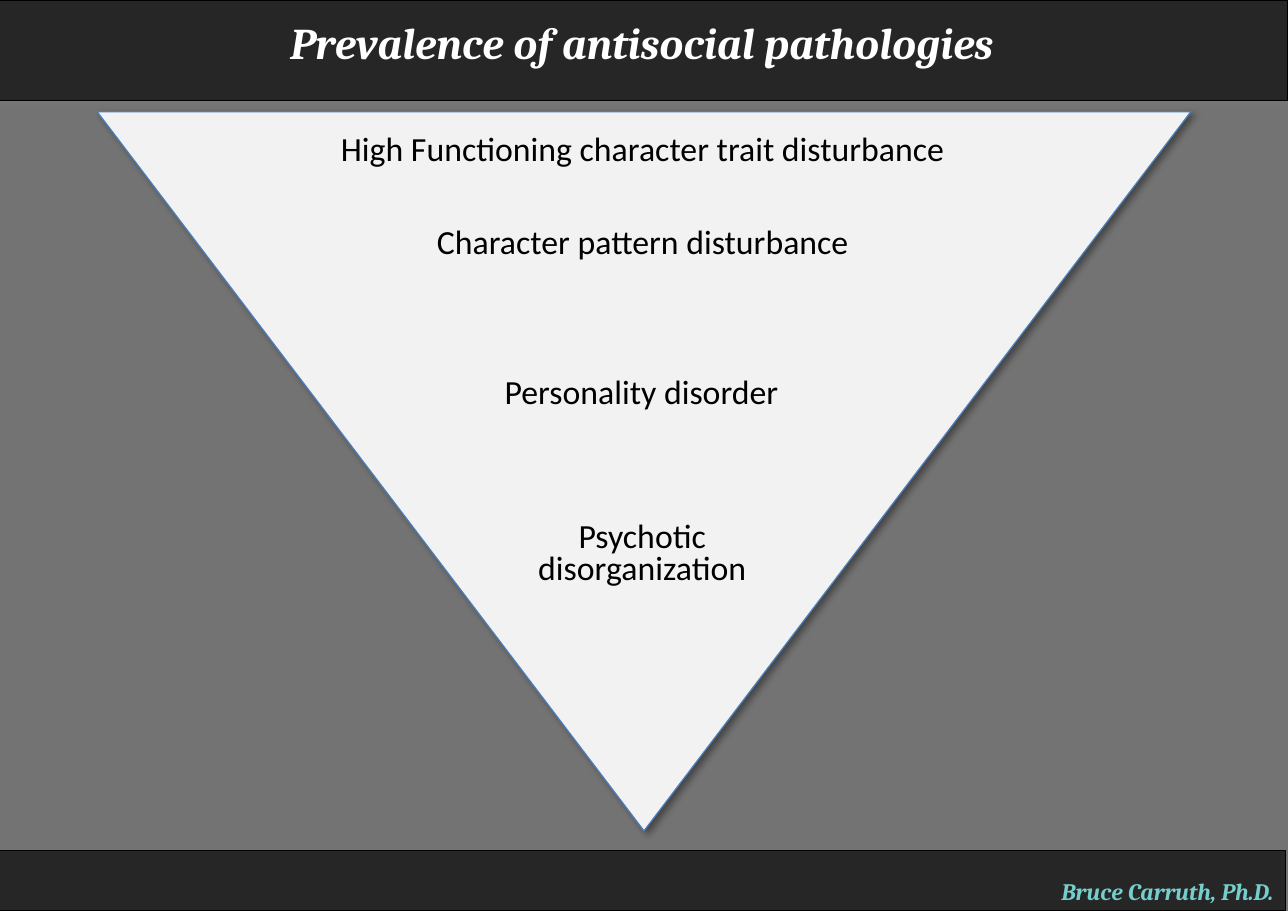
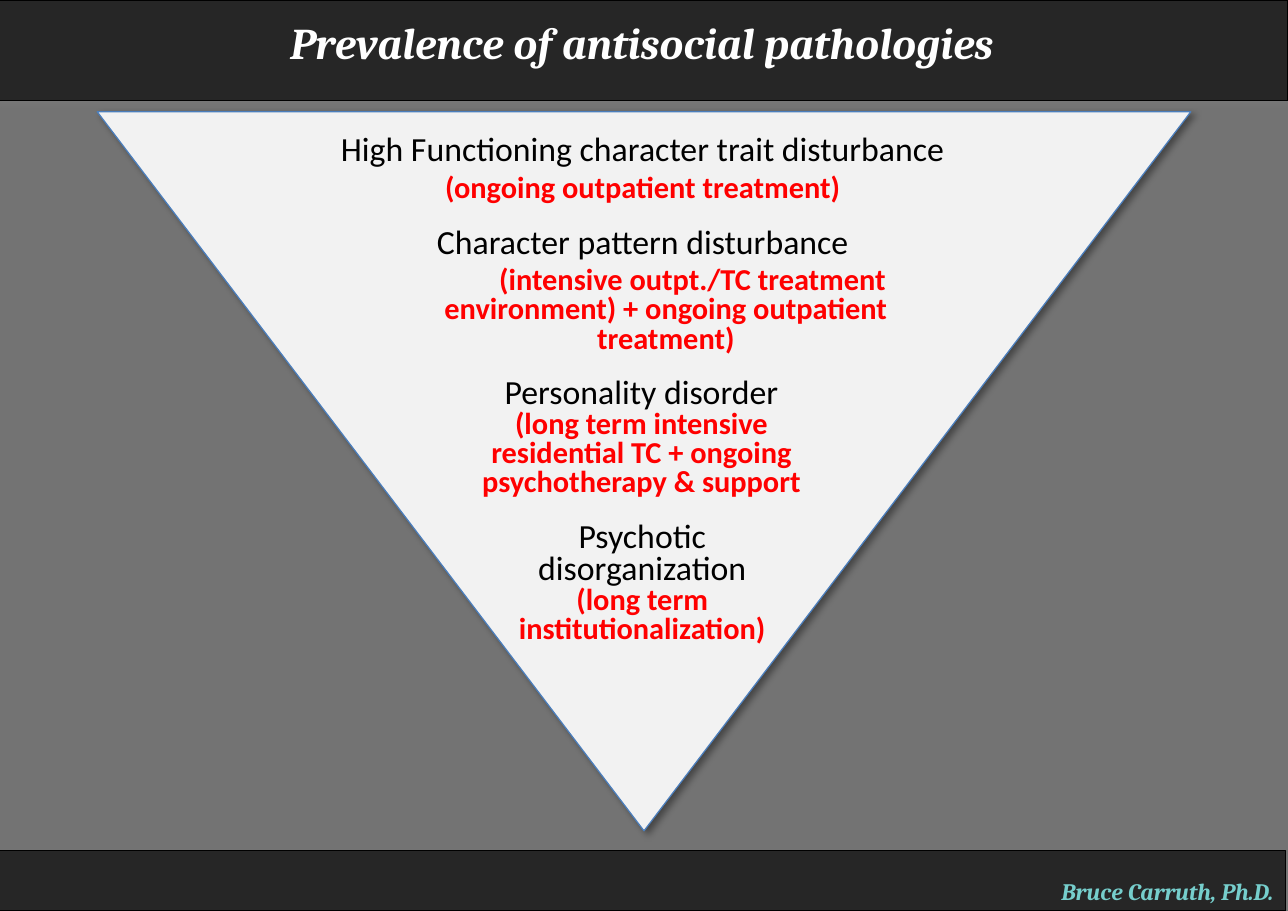
from lxml import etree
from pptx import Presentation
from pptx.dml.color import RGBColor
from pptx.enum.shapes import MSO_SHAPE
from pptx.enum.text import MSO_ANCHOR, MSO_AUTO_SIZE, PP_ALIGN
from pptx.oxml.ns import qn
from pptx.util import Inches, Pt

RECTANGLE, TRIANGLE = MSO_SHAPE.RECTANGLE, MSO_SHAPE.ISOSCELES_TRIANGLE
TOP, BOTTOM = MSO_ANCHOR.TOP, MSO_ANCHOR.BOTTOM
NO_FIT, GROW = MSO_AUTO_SIZE.NONE, MSO_AUTO_SIZE.SHAPE_TO_FIT_TEXT
CENTER, RIGHT = PP_ALIGN.CENTER, PP_ALIGN.RIGHT

COLORS = {
    "background": "737373", "band": "262626", "band_line": "000000",
    "band_shadow": "808080", "triangle": "F2F2F2", "triangle_line": "4B7EBC",
    "triangle_shadow": "000000", "title": "FFFFFF", "author": "76CECC",
    "level": "000000", "treatment": "FF0000",
}
HEADING_FONT, BODY_FONT = "Cambria", "Calibri"
TITLE = "Prevalence of antisocial pathologies"
AUTHOR = "Bruce Carruth, Ph.D."

# Shadow: colour, opacity %, blur pt, distance pt, direction in degrees
BAND_SHADOW = ("band_shadow", 35, 3.1, 1.8, 90)
TRIANGLE_SHADOW = ("triangle_shadow", 40, 4, 3, 45)

# Each level: box, height with treatments, line spacing, space before treatment,
# treatment margin and first-line indent, name, treatments
LEVELS = [
    ((2.58, 1, 5.42, 0.44), 0.74, 1.0, 0, (0, 0),
     "High Functioning character trait disturbance",
     ["(ongoing outpatient treatment)"]),
    ((3.08, 1.83, 4.42, 0.38), 1.16, 0.8, 4, (0.38, 0.44),
     "Character pattern disturbance",
     ["(intensive outpt./TC treatment environment) + ongoing outpatient treatment)"]),
    ((3.78, 3.07, 3, 0.38), 1.1, 0.8, 0, (0, 0),
     "Personality disorder",
     ["(long term intensive", "residential TC + ongoing psychotherapy & support"]),
    ((4.14, 4.25, 2.29, 0.65), 1.43, 0.8, 0, (0, 0),
     "Psychotic disorganization",
     ["(long term institutionalization)"]),
]


def rgb(name):
    return RGBColor.from_string(COLORS[name])


def add_run(paragraph, text, size, font, color, bold=False, italic=False):
    run = paragraph.add_run()
    run.text = text
    run.font.size, run.font.name = Pt(size), font
    run.font.bold, run.font.italic = bold, italic
    run.font.color.rgb = rgb(color)


def set_shadow(shape, color, opacity, blur, distance, direction):
    shape.shadow.inherit = False
    effects = shape._element.spPr.find(qn("a:effectLst"))
    shadow = etree.SubElement(
        effects, qn("a:outerShdw"), blurRad=str(Pt(blur)), dist=str(Pt(distance)),
        dir=str(direction * 60000), rotWithShape="0")
    tint = etree.SubElement(shadow, qn("a:srgbClr"), val=COLORS[color])
    etree.SubElement(tint, qn("a:alpha"), val=str(opacity * 1000))


def add_panel(slide, kind, box, fill, line, shadow):
    panel = slide.shapes.add_shape(kind, *map(Inches, box))
    panel.fill.solid()
    panel.fill.fore_color.rgb = rgb(fill)
    panel.line.color.rgb = rgb(line)
    panel.line.width = Pt(0.75)
    set_shadow(panel, *shadow)
    return panel


def add_band(slide, box):
    return add_panel(slide, RECTANGLE, box, "band", "band_line", BAND_SHADOW)


def add_footer(slide, box):
    frame = add_band(slide, box).text_frame
    frame.vertical_anchor = BOTTOM
    author = frame.paragraphs[0]
    author.alignment = RIGHT
    add_run(author, AUTHOR, 14, HEADING_FONT, "author", True, True)


def add_header(slide, band_box, title_box):
    add_band(slide, band_box)
    title = slide.shapes.title
    title.left, title.top, title.width, title.height = map(Inches, title_box)
    frame = title.text_frame
    frame.vertical_anchor, frame.auto_size, frame.word_wrap = TOP, NO_FIT, True
    heading = frame.paragraphs[0]
    heading.alignment = CENTER
    add_run(heading, TITLE, 26, HEADING_FONT, "title", True, True)
    # The title lies on top of its band
    slide.shapes._spTree.append(title._element)


def add_level(slide, level, with_treatment):
    (left, top, width, height), full_height, spacing, gap, indents, name, treatments = level
    if with_treatment:
        height = full_height
    frame = slide.shapes.add_textbox(
        *map(Inches, (left, top, width, height))).text_frame
    frame.word_wrap, frame.auto_size = True, GROW
    heading = frame.paragraphs[0]
    heading.alignment, heading.line_spacing = CENTER, spacing
    add_run(heading, name, 20, BODY_FONT, "level")
    for treatment in treatments if with_treatment else []:
        line = frame.add_paragraph()
        line.alignment, line.line_spacing = CENTER, spacing
        line.space_before = Pt(gap)
        margin, first_line = indents
        if margin:
            properties = line._p.get_or_add_pPr()
            properties.set("marL", str(Inches(margin)))
            properties.set("indent", str(Inches(first_line)))
        add_run(line, treatment, 18, BODY_FONT, "treatment", True)


def add_prevalence_slide(deck, with_treatment):
    slide = deck.slides.add_slide(deck.slide_layouts[5])
    slide.background.fill.solid()
    slide.background.fill.fore_color.rgb = rgb("background")
    # Inverted triangle
    triangle = add_panel(slide, TRIANGLE, (0.8, 0.92, 9, 5.92),
                         "triangle", "triangle_line", TRIANGLE_SHADOW)
    triangle.rotation = 180
    # Bands
    add_footer(slide, (-0.02, 7, 10.6, 0.5))
    add_header(slide, (-0.02, 0, 10.62, 0.83), (0.12, 0.08, 10.33, 0.75))
    # Levels from most to least common
    for level in LEVELS:
        add_level(slide, level, with_treatment)


def main():
    deck = Presentation()
    deck.slide_width, deck.slide_height = Inches(10.6), Inches(7.5)
    for with_treatment in (False, True):
        add_prevalence_slide(deck, with_treatment)
    deck.save("out.pptx")


if __name__ == "__main__":
    main()
